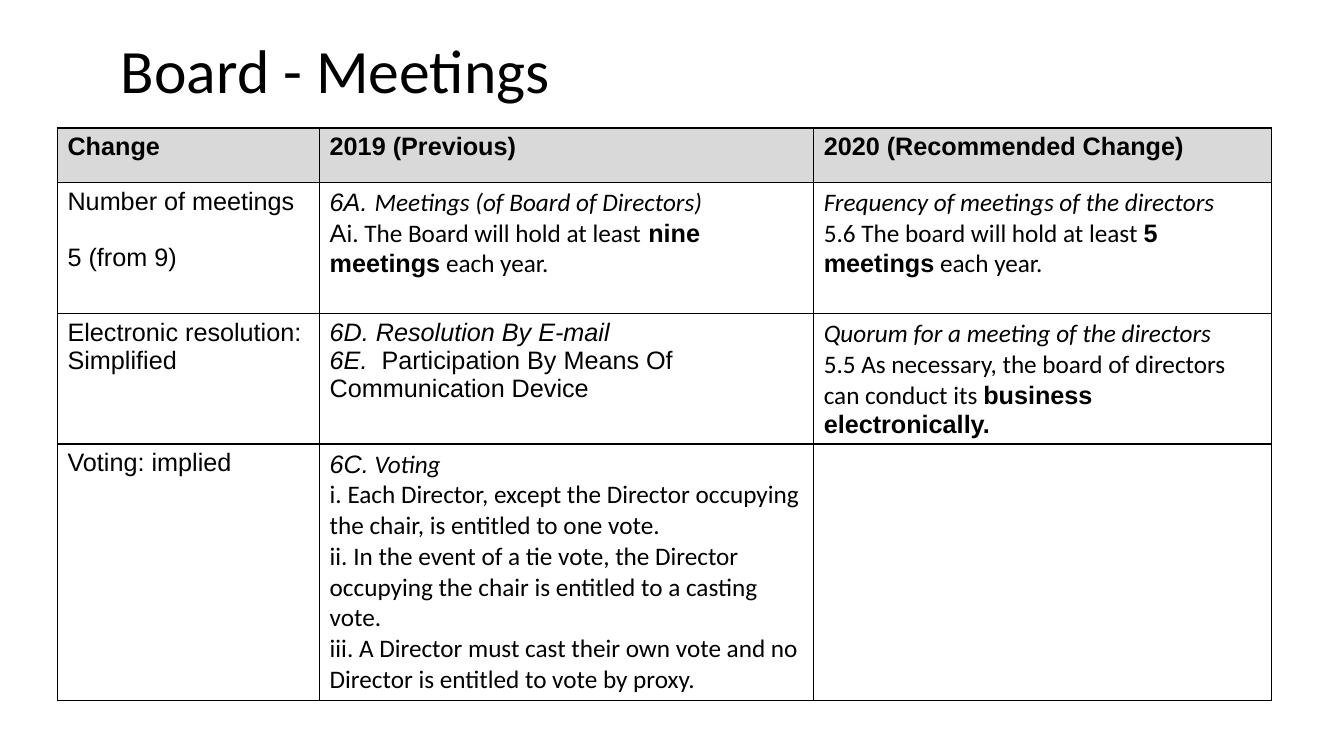
from dataclasses import dataclass

from lxml import etree
from pptx import Presentation
from pptx import util as u
from pptx.dml.color import RGBColor
from pptx.enum import text
from pptx.oxml import ns

COLOURS = {"ink": "000000", "header": "D9D9D9", "body": "FFFFFF"}
COLUMN_WIDTHS = [2.6, 4.9, 4.54]
ROW_HEIGHTS = [0.54, 1.3, 1.29, 2.54]


@dataclass(frozen=True)
class Span:
    words: str
    font: str = "Arial"
    bold: bool = False
    italic: bool = False


@dataclass(frozen=True)
class Para:
    spans: tuple[Span, ...]
    space_before: float = 0


def plain(words: str, space_before: float = 0) -> Para:
    return Para((Span(words),), space_before)


def heading(words: str) -> list[Para]:
    return [Para((Span(words, bold=True),))]


def clause(words: str) -> Para:
    return Para((Span(words, "Calibri"),))


def clause_title(words: str, number: str = "") -> Para:
    title = Span(words, "Calibri", italic=True)
    return Para((Span(number, italic=True), title) if number else (title,))


ROWS: list[list[list[Para]]] = [
    [heading("Change"), heading("2019 (Previous)"), heading("2020 (Recommended Change)")],
    [
        [plain("Number of meetings"), plain("5 (from 9)", space_before=20)],
        [
            clause_title("Meetings (of Board of Directors)", "6A. "),
            Para((
                Span("A"),
                Span("i. The Board will hold at least", "Calibri"),
                Span(" nine meetings", bold=True),
                Span(" each year.", "Calibri"),
            )),
        ],
        [
            clause_title("Frequency of meetings of the directors"),
            Para((
                Span("5.6 The board will hold at least ", "Calibri"),
                Span("5 meetings", bold=True),
                Span(" each year.", "Calibri"),
            )),
        ],
    ],
    [
        [plain("Electronic resolution: Simplified")],
        [
            Para((Span("6D. Resolution By E-mail", italic=True),)),
            Para((
                Span("6E. ", italic=True),
                Span(" Participation By Means Of Communication Device"),
            )),
        ],
        [
            clause_title("Quorum for a meeting of the directors"),
            Para((
                Span("5.5 As necessary, the board of directors can conduct its ", "Calibri"),
                Span("business electronically.", bold=True),
            )),
        ],
    ],
    [
        [plain("Voting: implied")],
        [
            clause_title(" Voting", "6C."),
            clause("i. Each Director, except the Director occupying the chair, "
                   "is entitled to one vote."),
            clause("ii. In the event of a tie vote, the Director occupying the chair "
                   "is entitled to a casting vote."),
            clause("iii. A Director must cast their own vote and no Director "
                   "is entitled to vote by proxy."),
        ],
        [],
    ],
]


def add_span(paragraph, span: Span, size: float) -> None:
    run = paragraph.add_run()
    run.text = span.words
    run.font.name = span.font
    run.font.size = u.Pt(size)
    run.font.bold = span.bold
    run.font.italic = span.italic
    run.font.color.rgb = RGBColor.from_string(COLOURS["ink"])


def add_borders(cell) -> None:
    properties = cell._tc.get_or_add_tcPr()
    for side in ("a:lnL", "a:lnR", "a:lnT", "a:lnB"):
        line = etree.SubElement(properties, ns.qn(side), w=str(u.Pt(1)))
        fill = etree.SubElement(line, ns.qn("a:solidFill"))
        etree.SubElement(fill, ns.qn("a:srgbClr"), val=COLOURS["ink"])


def fill_cell(cell, paras: list[Para], colour: str) -> None:
    add_borders(cell)
    cell.fill.solid()
    cell.fill.fore_color.rgb = RGBColor.from_string(colour)
    frame = cell.text_frame
    for index, para in enumerate(paras):
        paragraph = frame.add_paragraph() if index else frame.paragraphs[0]
        paragraph.space_before = u.Pt(para.space_before)
        for span in para.spans:
            add_span(paragraph, span, 18)


def add_title(page) -> None:
    title = page.shapes.title
    title.left, title.top = u.Inches(1.1), u.Inches(0)
    title.width, title.height = u.Inches(11.5), u.Inches(1.45)
    title.text_frame.vertical_anchor = text.MSO_ANCHOR.MIDDLE
    paragraph = title.text_frame.paragraphs[0]
    paragraph.alignment = text.PP_ALIGN.LEFT
    paragraph.line_spacing = 0.9
    add_span(paragraph, Span("Board - Meetings", "Calibri"), 44)


def add_changes_table(page) -> None:
    table = page.shapes.add_table(
        len(ROW_HEIGHTS), len(COLUMN_WIDTHS), u.Inches(0.57), u.Inches(1.27),
        u.Inches(sum(COLUMN_WIDTHS)), u.Inches(sum(ROW_HEIGHTS)),
    ).table
    table.first_row = table.horz_banding = False
    for column, width in zip(table.columns, COLUMN_WIDTHS):
        column.width = u.Inches(width)
    for row, height in zip(table.rows, ROW_HEIGHTS):
        row.height = u.Inches(height)
    for row_index, cells in enumerate(ROWS):
        colour = COLOURS["body" if row_index else "header"]
        for column_index, paras in enumerate(cells):
            fill_cell(table.cell(row_index, column_index), paras, colour)


def main() -> None:
    deck = Presentation()
    deck.slide_width, deck.slide_height = u.Inches(13.33), u.Inches(7.5)
    page = deck.slides.add_slide(deck.slide_layouts.get_by_name("Title Only"))
    add_title(page)
    add_changes_table(page)
    deck.save("out.pptx")


if __name__ == "__main__":
    main()
